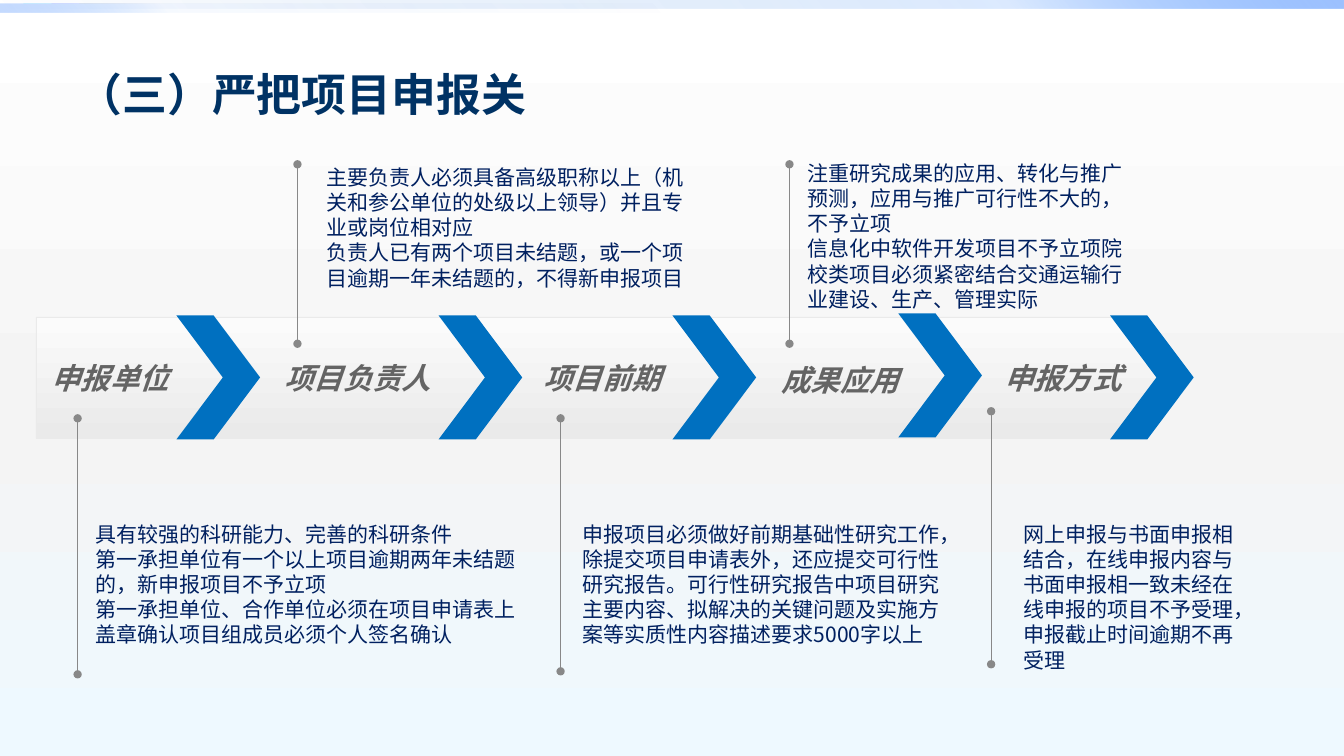
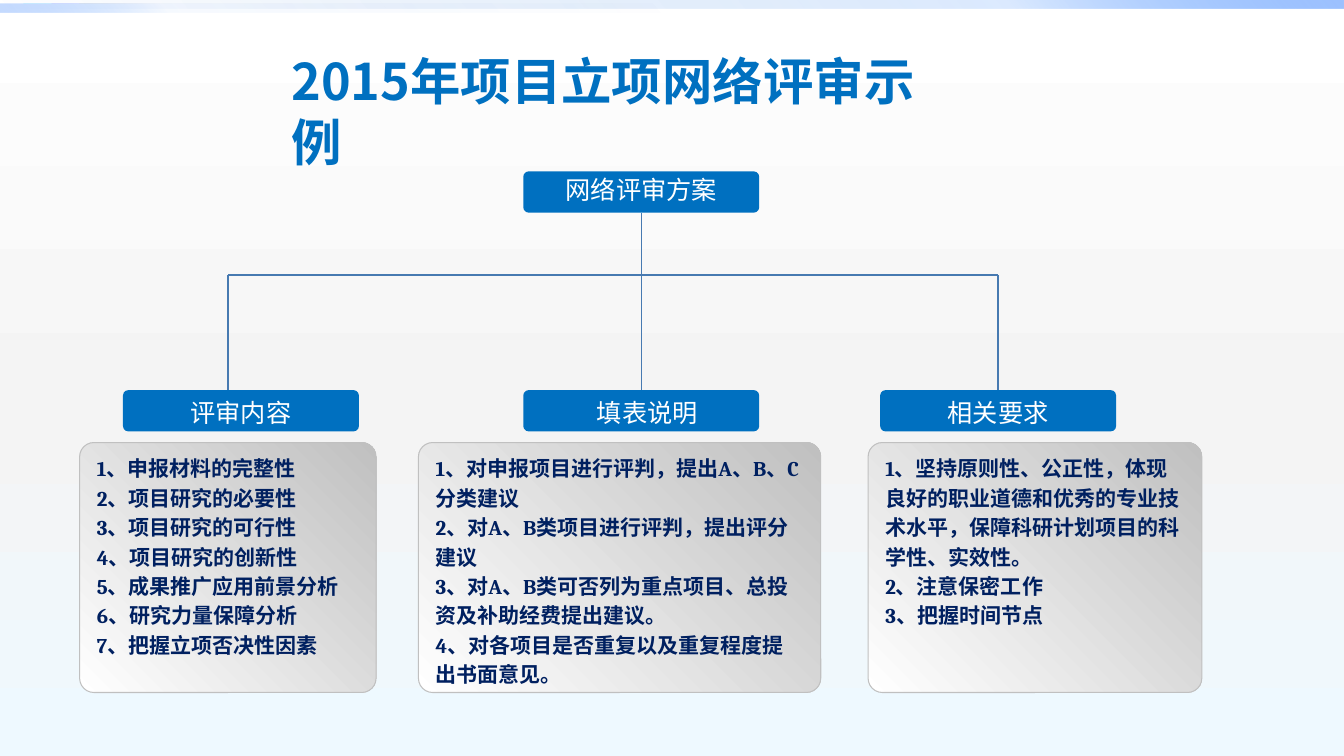
from dataclasses import dataclass

from lxml import etree
from pptx import Presentation
from pptx.dml.color import RGBColor
from pptx.enum.lang import MSO_LANGUAGE_ID
from pptx.enum.shapes import MSO_CONNECTOR, MSO_SHAPE
from pptx.enum.text import MSO_ANCHOR, MSO_AUTO_SIZE, PP_ALIGN
from pptx.oxml.ns import qn
from pptx.util import Pt

PX = 9144  # 100 px to the inch
SLIDE_W, SLIDE_H = 1333, 750
TITLE_ONLY = 5

RECT = MSO_SHAPE.RECTANGLE
ROUNDED = MSO_SHAPE.ROUNDED_RECTANGLE
CHEVRON = MSO_SHAPE.CHEVRON
HOME_PLATE = MSO_SHAPE.PENTAGON
STRAIGHT = MSO_CONNECTOR.STRAIGHT
LEFT, CENTER = PP_ALIGN.LEFT, PP_ALIGN.CENTER
TOP, MIDDLE = MSO_ANCHOR.TOP, MSO_ANCHOR.MIDDLE
CHINESE = MSO_LANGUAGE_ID.SIMPLIFIED_CHINESE


@dataclass(frozen=True)
class TextStyle:
    font: str
    size: int
    color: str
    bold: bool = False
    italic: bool = False
    pitch: float = 0  # exact line height in points, 0 for natural


class Theme:
    cjk = "Noto Sans CJK SC"
    blue = "0070C0"
    rail = "888888"
    tree = "477AB1"
    plate_edge = "EAEAEA"
    panel_edge = "C0C0C0"
    # Gradient stops: position, colour, opacity in percent
    background = [(0, "FFFFFF", 100), (55, "F4F4F4", 100), (100, "EEF9FF", 100)]
    band_full = [(0, "0058B7", 0), (75, "4F95FF", 20), (100, "9EC2FF", 100)]
    band_half = [(0, "0058B7", 0), (75, "4F95FF", 5), (100, "9EC2FF", 60)]
    plate = [(0, "FBFBFB", 100), (100, "EAEAEA", 100)]
    panel = [(0, "FFFFFF", 100), (100, "C0C0C0", 100)]
    title = TextStyle("Arial", 32, "003264", bold=True)
    example_title = TextStyle(cjk, 36, blue, bold=True, pitch=43.5)
    step = TextStyle("Arial Narrow", 21, "646464", bold=True, italic=True)
    note = TextStyle(cjk, 15, "002060", pitch=18)
    label = TextStyle("Arial", 18, "FFFFFF")
    panel_text = TextStyle("Cambria", 15, "002060", bold=True, pitch=21)


# ---- Shared drawing helpers ----
def emu(lengths):
    return [length * PX for length in lengths]


def paint_gradient(properties, stops, angle):
    """Turn the solid fill of a properties element into a linear gradient."""
    gradient = etree.Element(qn("a:gradFill"), rotWithShape="1")
    stop_list = etree.SubElement(gradient, qn("a:gsLst"))
    for position, color, opacity in stops:
        stop = etree.SubElement(stop_list, qn("a:gs"), pos=str(position * 1000))
        tint = etree.SubElement(stop, qn("a:srgbClr"), val=color)
        if opacity < 100:
            etree.SubElement(tint, qn("a:alpha"), val=str(opacity * 1000))
    etree.SubElement(gradient, qn("a:lin"), ang=str(angle * 60000), scaled="0")
    properties.replace(properties.find(qn("a:solidFill")), gradient)


def add_block(page, kind, area, fill, angle=None, edge=None, adjust=None):
    """Draw a preset shape; fill is a colour, or gradient stops with an angle."""
    block = page.shapes.add_shape(kind, *emu(area))
    block.shadow.inherit = False
    block.fill.solid()
    if angle is None:
        block.fill.fore_color.rgb = RGBColor.from_string(fill)
    else:
        paint_gradient(block._element.spPr, fill, angle)
    if edge:
        block.line.color.rgb = RGBColor.from_string(edge)
        block.line.width = Pt(0.75)
    else:
        block.line.fill.background()
    if adjust is not None:
        block.adjustments[0] = adjust
    return block


def add_line(page, start, end, color, width, dots=False):
    line = page.shapes.add_connector(STRAIGHT, *emu(start + end))
    line.line.color.rgb = RGBColor.from_string(color)
    line.line.width = Pt(width)
    if dots:
        outline = line.line._get_or_add_ln()
        for tag in ("a:headEnd", "a:tailEnd"):
            etree.SubElement(outline, qn(tag), type="oval")
    etree.SubElement(line._element.spPr, qn("a:effectLst"))


def write(box, paragraphs, style, align=LEFT, anchor=TOP,
          insets=(13, 6, 13, 6), wrap=True):
    frame = box.text_frame
    frame.auto_size = MSO_AUTO_SIZE.NONE
    frame.word_wrap = wrap
    frame.vertical_anchor = anchor
    (frame.margin_left, frame.margin_top,
     frame.margin_right, frame.margin_bottom) = emu(insets)
    for index, text in enumerate(paragraphs):
        para = frame.add_paragraph() if index else frame.paragraphs[0]
        para.alignment = align
        para.space_before = Pt(0)
        if style.pitch:
            para.line_spacing = Pt(style.pitch)
        span = para.add_run()
        span.text = text
        font = span.font
        font.name, font.size = style.font, Pt(style.size)
        font.bold, font.italic = style.bold, style.italic
        font.color.rgb = RGBColor.from_string(style.color)
        font.language_id = CHINESE
        latin = font._element.find(qn("a:latin"))
        latin.addnext(etree.Element(qn("a:ea"), typeface=Theme.cjk))


def add_text(page, area, paragraphs, style, **options):
    box = page.shapes.add_textbox(*emu(area))
    write(box, paragraphs, style, **options)


def set_title(page, area, text, style, **options):
    title = page.shapes.title
    title.left, title.top, title.width, title.height = emu(area)
    write(title, [text], style, **options)


def prepare_layout(deck, page):
    """Put the background on the master and the top bands on the layout."""
    master = deck.slide_master
    master.background.fill.solid()
    background = master._element.find(".//" + qn("p:bgPr"))
    paint_gradient(background, Theme.background, 90)
    bands = [((0, 0, SLIDE_W, 8), Theme.band_full, 315),
             ((0, 4, 667, 8), Theme.band_half, 135)]
    for number, (area, stops, angle) in enumerate(bands, 101):
        band = add_block(page, RECT, area, stops, angle)
        band._element.nvSpPr.cNvPr.set("id", str(number))
        page.slide_layout.shapes._spTree.append(band._element)


# ---- Slide 1: application steps ----
# Name, name position, chevron position, rail (x, top, bottom), note box, note
STEPS = [
    ("申报单位", (38, 351), (175, 313), (77, 415, 669), (82, 511, 458, 139),
     ["具有较强的科研能力、完善的科研条件",
      "第一承担单位有一个以上项目逾期两年未结题的，新申报项目不予立项",
      "第一承担单位、合作单位必须在项目申请表上盖章确认项目组成员必须个人签名确认"]),
    ("项目负责人", (269, 351), (435, 313), (295, 163, 341), (311, 157, 397, 139),
     ["主要负责人必须具备高级职称以上（机关和参公单位的处级以上领导）并且专业或岗位相对应",
      "负责人已有两个项目未结题，或一个项目逾期一年未结题的，不得新申报项目"]),
    ("项目前期", (526, 351), (667, 313), (556, 415, 666), (565, 511, 400, 139),
     ["申报项目必须做好前期基础性研究工作，除提交项目申请表外，还应提交可行性研究报告。"
      "可行性研究报告中项目研究主要内容、拟解决的关键问题及实施方案等实质性内容描述要求5000字以上"]),
    ("成果应用", (762, 353), (891, 311), (783, 163, 341), (788, 153, 355, 164),
     ["注重研究成果的应用、转化与推广预测，应用与推广可行性不大的，不予立项",
      "信息化中软件开发项目不予立项院校类项目必须紧密结合交通运输行业建设、生产、管理实际"]),
    ("申报方式", (983, 351), (1101, 313), (983, 408, 659), (1002, 511, 241, 164),
     ["网上申报与书面申报相结合，在线申报内容与书面申报相一致未经在线申报的项目不予受理，"
      "申报截止时间逾期不再受理"]),
]


def draw_step(page, name, name_at, chevron_at, rail, note_area, note):
    add_block(page, CHEVRON, chevron_at + (83, 123), Theme.blue, adjust=0.555)
    name_width = 28 + 29 * len(name)
    add_text(page, name_at + (name_width, 48), [name], Theme.step,
             anchor=MIDDLE, wrap=False)
    x, top, bottom = rail
    add_line(page, (x, top), (x, bottom), Theme.rail, 0.75, dots=True)
    add_text(page, note_area, note, Theme.note)


def build_steps(page):
    set_title(page, (67, 30, 1200, 125), "（三）严把项目申报关", Theme.title,
              anchor=MIDDLE, insets=(10, 5, 10, 5))
    add_block(page, HOME_PLATE, (36, 315, 1135, 120), Theme.plate, 90,
              Theme.plate_edge, 0.4)
    for step in STEPS:
        draw_step(page, *step)


# ---- Slide 2: review tree ----
LABEL_W, LABEL_H = 234, 41
ROOT_AT = (519, 170)
BUS_Y, BRANCH_Y, PANEL_Y, PANEL_H = 273, 387, 439, 248

# Label, label left, text shift to the right, drop line x, panel left and width, points
BRANCHES = [
    ("评审内容", 122, 0, 226, 79, 294,
     ["1、申报材料的完整性", "2、项目研究的必要性", "3、项目研究的可行性",
      "4、项目研究的创新性", "5、成果推广应用前景分析", "6、研究力量保障分析",
      "7、把握立项否决性因素"]),
    ("填表说明", 519, 6, 636, 415, 399,
     ["1、对申报项目进行评判，提出A、B、C分类建议",
      "2、对A、B类项目进行评判，提出评分建议",
      "3、对A、B类可否列为重点项目、总投资及补助经费提出建议。",
      "4、对各项目是否重复以及重复程度提出书面意见。"]),
    ("相关要求", 873, 0, 990, 861, 331,
     ["1、坚持原则性、公正性，体现良好的职业道德和优秀的专业技术水平，"
      "保障科研计划项目的科学性、实效性。",
      "2、注意保密工作", "3、把握时间节点"]),
]


def draw_label(page, left, top, text, shift=0, drop=0, lift=0):
    label = add_block(page, ROUNDED, (left, top, LABEL_W, LABEL_H), Theme.blue,
                      adjust=0.131)
    write(label, [text], Theme.label, CENTER, MIDDLE,
          insets=(2 * shift, 2 * drop, 0, 2 * lift))


def draw_branch(page, text, left, shift, line_x, panel_left, panel_width, points):
    add_line(page, (line_x, BUS_Y), (line_x, BRANCH_Y), Theme.tree, 1)
    draw_label(page, left, BRANCH_Y, text, shift, drop=2)
    panel = add_block(page, ROUNDED, (panel_left, PANEL_Y, panel_width, PANEL_H),
                      Theme.panel, 315, Theme.panel_edge, 0.057)
    write(panel, points, Theme.panel_text, insets=(13, 5, 13, 5))


def build_tree(page):
    set_title(page, (276, 44, 676, 124), "2015年项目立项网络评审示例",
              Theme.example_title, insets=(13, 5, 13, 0))
    # Trunk and bus
    root_left, root_top = ROOT_AT
    drops = [branch[3] for branch in BRANCHES]
    trunk = root_left + LABEL_W // 2
    add_line(page, (trunk, root_top + LABEL_H), (trunk, BUS_Y), Theme.tree, 1)
    add_line(page, (drops[0], BUS_Y), (drops[-1], BUS_Y), Theme.tree, 1)
    # Labels and panels
    draw_label(page, root_left, root_top, "网络评审方案", lift=3)
    for branch in BRANCHES:
        draw_branch(page, *branch)


def main():
    deck = Presentation()
    deck.slide_width, deck.slide_height = emu((SLIDE_W, SLIDE_H))
    layout = deck.slide_layouts[TITLE_ONLY]
    pages = [deck.slides.add_slide(layout) for _ in range(2)]
    prepare_layout(deck, pages[0])
    for page, build in zip(pages, (build_steps, build_tree)):
        build(page)
    deck.save("out.pptx")


if __name__ == "__main__":
    main()
